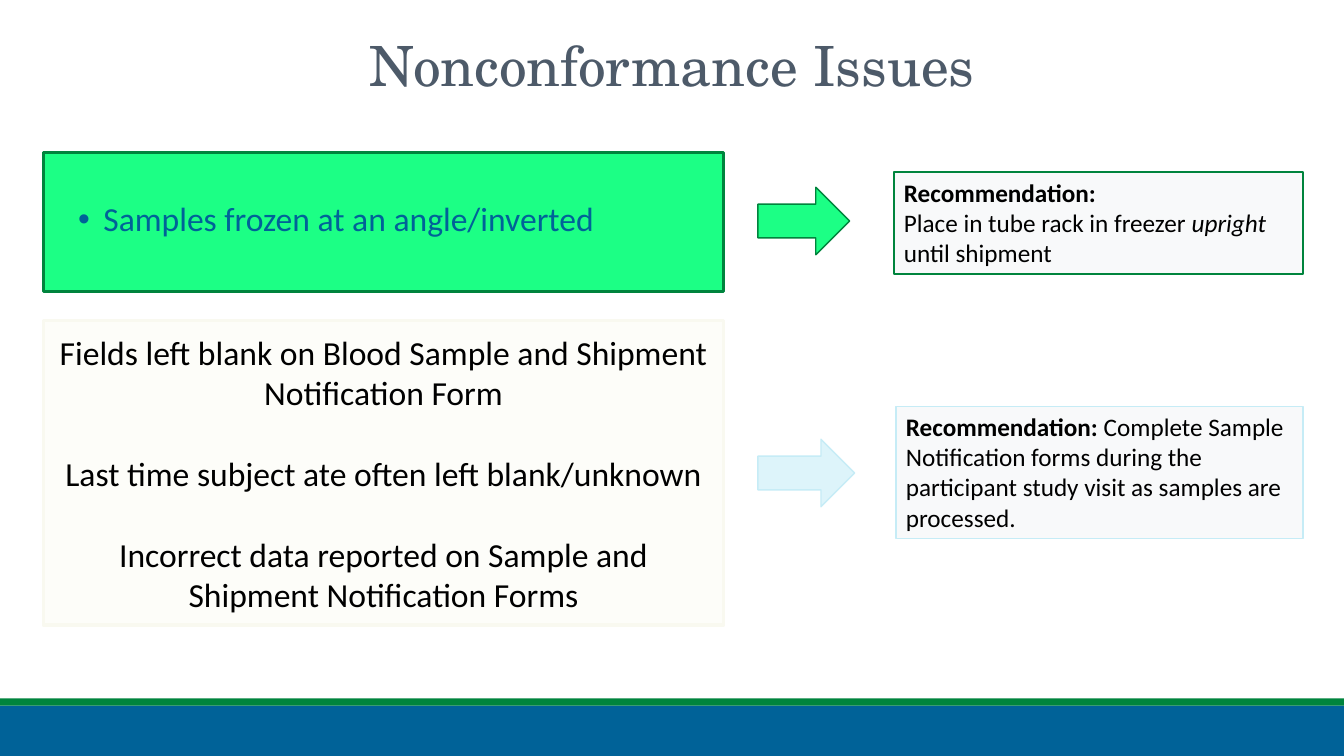
from collections import namedtuple

from lxml import etree
from pptx import Presentation
from pptx.dml.color import RGBColor
from pptx.enum.shapes import MSO_SHAPE
from pptx.enum.text import MSO_ANCHOR, MSO_AUTO_SIZE, PP_ALIGN
from pptx.oxml.ns import qn
from pptx.util import Cm, Pt

RECTANGLE, ARROW = MSO_SHAPE.RECTANGLE, MSO_SHAPE.RIGHT_ARROW
LEFT, CENTER = PP_ALIGN.LEFT, PP_ALIGN.CENTER
TOP, MIDDLE = MSO_ANCHOR.TOP, MSO_ANCHOR.MIDDLE
NO_AUTOFIT = MSO_AUTO_SIZE.NONE

BLACK = RGBColor(0x00, 0x00, 0x00)
SLATE = RGBColor(0x4D, 0x5A, 0x69)
BLUE = RGBColor(0x00, 0x62, 0x98)
GREEN = RGBColor(0x00, 0x84, 0x3D)
BRIGHT_GREEN = RGBColor(0x1C, 0xFF, 0x85)
IVORY = RGBColor(0xFD, 0xFD, 0xF9)
CREAM = RGBColor(0xF9, 0xF9, 0xF0)
CARD_GRAY = RGBColor(0xF8, 0xF9, 0xFA)
PALE_BLUE = RGBColor(0xDD, 0xF4, 0xFA)
SKY = RGBColor(0xC6, 0xEC, 0xF6)

BODY_FONT = "Calibri"
TITLE_FORMAT = {"name": "TeX Gyre Schola", "size": Pt(39.6), "color": SLATE}
BULLET_FORMAT = {"name": BODY_FONT, "size": Pt(24), "color": BLUE}
ISSUE_FORMAT = {"name": BODY_FONT, "size": Pt(24), "color": BLACK}
CARD_FORMAT = {"name": BODY_FONT, "size": Pt(18), "color": BLACK}
BOLD, ITALIC = {"bold": True}, {"italic": True}

Box = namedtuple("Box", "left top width height")
PAGE_BOX = Box(0, 0, 33.87, 19.05)
FORM_ISSUES = [
    "Fields left blank on Blood Sample and Shipment Notification Form",
    "Last time subject ate often left blank/unknown",
    "Incorrect data reported on Sample and Shipment Notification Forms",
]
FREEZER_ADVICE = [
    [("Recommendation:", BOLD)],
    [("Place in tube rack in freezer ", {}), ("upright", ITALIC), (" until shipment", {})],
]
FORM_ADVICE = [
    [("Recommendation: ", BOLD),
     ("Complete Sample Notification forms during the participant study visit "
      "as samples are processed.", {})],
]


def add_span(para, text, formats):
    """Add a run of text and apply its format values."""
    span = para.add_run()
    span.text = text
    for name, value in formats.items():
        if name == "color":
            span.font.color.rgb = value
        else:
            setattr(span.font, name, value)


def add_paragraphs(frame, paragraphs, formats, align, gap=0):
    """Fill a text frame with paragraphs made of (text, format) spans."""
    for index, spans in enumerate(paragraphs):
        para = frame.add_paragraph() if index else frame.paragraphs[0]
        para.alignment = align
        para.space_before = Pt(gap if index else 0)
        for text, extra in spans:
            add_span(para, text, {**formats, **extra})


def add_block(page, kind, box, fill, line=None, weight=1):
    """Add a flat shape with a fill and an optional outline."""
    shape = page.shapes.add_shape(kind, *map(Cm, box))
    shape.shadow.inherit = False
    shape.fill.solid()
    shape.fill.fore_color.rgb = fill
    if line is None:
        shape.line.fill.background()
    else:
        shape.line.color.rgb = line
        shape.line.width = Pt(weight)
    shape.text_frame.word_wrap = True
    return shape


def place_placeholder(holder, box, anchor):
    """Move a placeholder to a box and fix how its text fits."""
    for name, value in zip(Box._fields, box):
        setattr(holder, name, Cm(value))
    frame = holder.text_frame
    for name, value in {"word_wrap": True, "auto_size": NO_AUTOFIT,
                        "vertical_anchor": anchor}.items():
        setattr(frame, name, value)
    para = frame.paragraphs[0]
    para.alignment = CENTER
    para.line_spacing = 0.9
    return para


def add_footer(page, box):
    """Add the blue band and the green strip at the bottom of the box."""
    band, strip = 1.27, 0.18
    bottom = box.top + box.height
    add_block(page, RECTANGLE, Box(box.left, bottom - band, box.width, band), BLUE)
    add_block(page, RECTANGLE, Box(box.left, bottom - band - strip, box.width, strip), GREEN)


def add_title(page, box):
    """Place the page title in the box."""
    para = place_placeholder(page.shapes.title, box, MIDDLE)
    add_span(para, "Nonconformance Issues", TITLE_FORMAT)


def add_sample_issue(page, box):
    """Add the green panel with its bulleted issue in front."""
    panel = add_block(page, RECTANGLE, box, BRIGHT_GREEN, GREEN, 2.25)
    body = page.placeholders[1]
    text_box = Box(box.left - 1.09, box.top + 1.14, box.width - 0.21, 1.3)
    para = place_placeholder(body, text_box, TOP)
    para.space_before = Pt(10)
    add_span(para, "Samples frozen at an angle/inverted", BULLET_FORMAT)
    properties = para._p.get_or_add_pPr()
    properties.set("marL", str(Cm(0.635)))
    properties.set("indent", str(-Cm(0.635)))
    etree.SubElement(properties, qn("a:buFont")).set("typeface", "Arial")
    etree.SubElement(properties, qn("a:buChar")).set("char", "•")
    panel.element.addnext(body.element)


def add_form_issues(page, box):
    """Add the ivory panel listing the form issues."""
    frame = add_block(page, RECTANGLE, box, IVORY, CREAM, 2.25).text_frame
    frame.vertical_anchor = MIDDLE
    add_paragraphs(frame, [[(issue, {})] for issue in FORM_ISSUES], ISSUE_FORMAT, CENTER, 29)


def add_recommendation(page, box, arrow_box, advice, arrow_fill, line):
    """Add a recommendation card and the arrow that leads to it."""
    frame = add_block(page, RECTANGLE, box, CARD_GRAY, line).text_frame
    frame.vertical_anchor = TOP
    add_paragraphs(frame, advice, CARD_FORMAT, LEFT)
    add_block(page, ARROW, arrow_box, arrow_fill, line)


def main():
    """Build the deck and save it."""
    deck = Presentation()
    deck.slide_width, deck.slide_height = Cm(PAGE_BOX.width), Cm(PAGE_BOX.height)
    page = deck.slides.add_slide(deck.slide_layouts[1])
    add_footer(page, PAGE_BOX)
    add_title(page, Box(0, 0.76, PAGE_BOX.width, 1.93))
    add_form_issues(page, Box(1.09, 8.08, 17.15, 7.67))
    add_sample_issue(page, Box(1.09, 3.84, 17.15, 3.5))
    add_recommendation(page, Box(22.53, 4.34, 10.31, 2.57), Box(19.1, 4.72, 2.31, 1.7),
                       FREEZER_ADVICE, BRIGHT_GREEN, GREEN)
    add_recommendation(page, Box(22.58, 10.24, 10.26, 3.33), Box(19.1, 11.07, 2.44, 1.7),
                       FORM_ADVICE, PALE_BLUE, SKY)
    deck.save("out.pptx")


if __name__ == "__main__":
    main()
